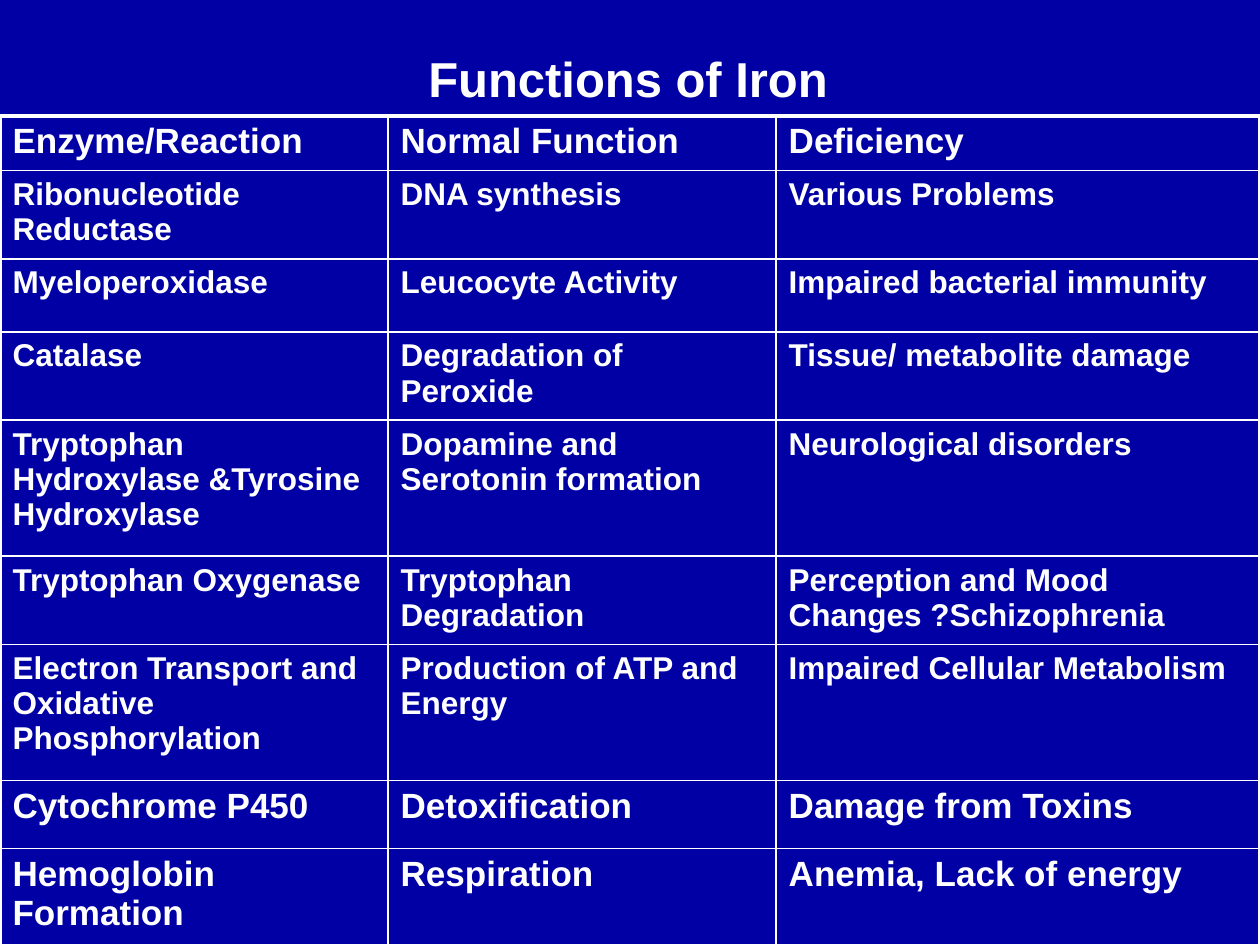
from lxml import etree
from pptx import Presentation
from pptx import util as u
from pptx.dml import color
from pptx.enum import text
from pptx.oxml import ns

COLORS = {"background": "0000A4", "text": "FFFFFF", "border": "FFFFFF"}
FONT = "Arial"
THICK, THIN = 2.25, 1
COLUMN_WIDTHS = [3.08, 3.08, 3.84]
ROWS = [
    (0.42, 20, ["Enzyme/Reaction", "Normal Function", "Deficiency"]),
    (0.68, 18, ["Ribonucleotide Reductase", "DNA synthesis", "Various Problems"]),
    (0.58, 18, ["Myeloperoxidase", "Leucocyte Activity", "Impaired bacterial immunity"]),
    (0.68, 18, ["Catalase", "Degradation of Peroxide", "Tissue/ metabolite damage"]),
    (1.08, 18, ["Tryptophan Hydroxylase &Tyrosine Hydroxylase",
                "Dopamine and Serotonin formation", "Neurological disorders"]),
    (0.68, 18, ["Tryptophan Oxygenase", "Tryptophan Degradation",
                "Perception and Mood Changes ?Schizophrenia"]),
    (1.08, 18, ["Electron Transport and Oxidative Phosphorylation",
                "Production of ATP and Energy", "Impaired Cellular Metabolism"]),
    (0.54, 20, ["Cytochrome P450", "Detoxification", "Damage from Toxins"]),
    (0.72, 20, ["Hemoglobin Formation", "Respiration", "Anemia, Lack of energy"]),
]


def rgb(name):
    return color.RGBColor.from_string(COLORS[name])


def write_text(frame, content, size, alignment):
    frame.word_wrap = True
    paragraph = frame.paragraphs[0]
    paragraph.text = content
    paragraph.alignment = alignment
    font_format = {"name": FONT, "size": u.Pt(size), "bold": True}
    for name, value in font_format.items():
        setattr(paragraph.font, name, value)
    paragraph.font.color.rgb = rgb("text")


def add_title(slide, content):
    shape = slide.shapes.add_textbox(
        u.Inches(0.33), u.Inches(0.25), u.Inches(9.31), u.Inches(0.74))
    shape.text_frame.vertical_anchor = text.MSO_ANCHOR.MIDDLE
    write_text(shape.text_frame, content, 28, text.PP_ALIGN.CENTER)


def set_borders(cell, widths):
    properties = cell._tc.get_or_add_tcPr()
    for side, width in widths.items():
        line = etree.SubElement(properties, ns.qn(f"a:ln{side}"), w=str(u.Pt(width)))
        fill = etree.SubElement(line, ns.qn("a:solidFill"))
        etree.SubElement(fill, ns.qn("a:srgbClr"), val=COLORS["border"])


def add_function_table(slide):
    heights = [height for height, _, _ in ROWS]
    frame = slide.shapes.add_table(
        len(ROWS), len(COLUMN_WIDTHS), u.Inches(0), u.Inches(0.92),
        u.Inches(sum(COLUMN_WIDTHS)), u.Inches(sum(heights)))
    table = frame.table
    for name, value in {"first_row": False, "horz_banding": False}.items():
        setattr(table, name, value)
    for column, width in zip(table.columns, COLUMN_WIDTHS):
        column.width = u.Inches(width)
    last_row, last_column = len(ROWS) - 1, len(COLUMN_WIDTHS) - 1
    for row_index, (height, size, contents) in enumerate(ROWS):
        table.rows[row_index].height = u.Inches(height)
        for column_index, content in enumerate(contents):
            cell = table.cell(row_index, column_index)
            write_text(cell.text_frame, content, size, text.PP_ALIGN.LEFT)
            outer = {"L": column_index == 0, "R": column_index == last_column,
                     "T": row_index == 0, "B": row_index == last_row}
            set_borders(cell, {side: THICK if edge else THIN
                               for side, edge in outer.items()})
            cell.fill.background()


def main():
    presentation = Presentation()
    presentation.slide_width = u.Inches(10)
    presentation.slide_height = u.Inches(7.5)
    slide = presentation.slides.add_slide(presentation.slide_layouts[6])
    slide.background.fill.solid()
    slide.background.fill.fore_color.rgb = rgb("background")
    add_title(slide, "Functions of Iron")
    add_function_table(slide)
    presentation.save("out.pptx")


if __name__ == "__main__":
    main()
